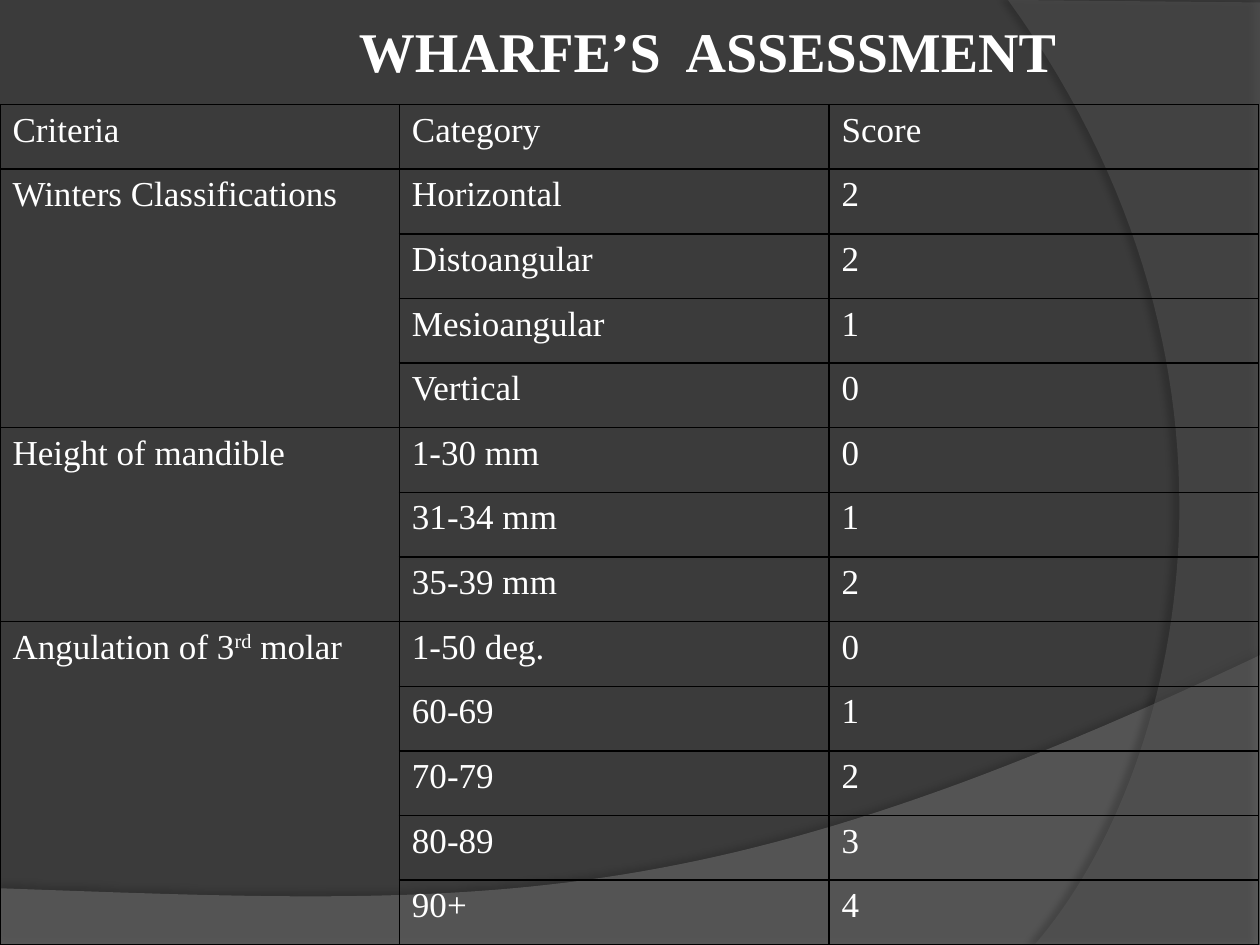
from dataclasses import dataclass

from lxml import etree
from pptx import Presentation
from pptx.dml.color import RGBColor
from pptx.oxml.ns import qn
from pptx.util import Inches, Pt

BLANK_LAYOUT = 6
BORDER_TAGS = ("a:lnL", "a:lnR", "a:lnT", "a:lnB")


@dataclass(frozen=True)
class Theme:
    background: str = "3B3B3B"
    wave: str = "7F7F7F"
    arc: str = "5E5E5E"
    text: str = "FFFFFF"
    line: str = "000000"
    font: str = "Times New Roman"
    title_size: int = 32
    body_size: int = 20
    border_width: int = 1


THEME = Theme()
HEADINGS = ("Criteria", "Category", "Score")
CRITERIA = (
    (("Winters Classifications",),
     (("Horizontal", 2), ("Distoangular", 2), ("Mesioangular", 1), ("Vertical", 0))),
    (("Height of mandible",),
     (("1-30 mm", 0), ("31-34 mm", 1), ("35-39 mm", 2))),
    (("Angulation of 3", "rd", " molar"),
     (("1-50 deg.", 0), ("60-69", 1), ("70-79", 2), ("80-89", 3), ("90+", 4))),
)


def add_child(parent, tag, **attributes):
    child = etree.SubElement(parent, qn(tag))
    for name, value in attributes.items():
        child.set(name, str(value))
    return child


def add_color(parent, color, alpha=100):
    element = add_child(add_child(parent, "a:solidFill"), "a:srgbClr", val=color)
    add_child(element, "a:alpha", val=alpha * 1000)


def curve_points(start, control_1, control_2, end, steps=60):
    points = []
    for step in range(1, steps + 1):
        t = step / steps
        weights = ((1 - t) ** 3, 3 * t * (1 - t) ** 2, 3 * t ** 2 * (1 - t), t ** 3)
        corners = (start, control_1, control_2, end)
        points.append(tuple(sum(weight * corner[axis] for weight, corner in zip(weights, corners))
                            for axis in (0, 1)))
    return points


def add_backdrop(slide, points, color, alpha, shadow_alpha, shadow_distance, shadow_angle):
    outline = [(Inches(x), Inches(y)) for x, y in points]
    builder = slide.shapes.build_freeform(*outline[0], scale=1.0)
    builder.add_line_segments(outline[1:], close=True)
    shape = builder.convert_to_shape()
    shape.fill.solid()
    shape.fill.fore_color.rgb = RGBColor.from_string(color)
    fill_color = shape._element.spPr.find(qn("a:solidFill"))[0]
    add_child(fill_color, "a:alpha", val=alpha * 1000)
    shape.line.fill.background()
    shape.shadow.inherit = False
    effects = shape._element.spPr.find(qn("a:effectLst"))
    shadow = add_child(effects, "a:outerShdw", blurRad=Pt(4), dist=Pt(shadow_distance),
                       dir=shadow_angle * 60000, algn="ctr", rotWithShape=0)
    shadow_color = add_child(shadow, "a:srgbClr", val=THEME.line)
    add_child(shadow_color, "a:alpha", val=shadow_alpha * 1000)


def format_run(run, size, bold=False):
    run.font.name = THEME.font
    run.font.size = Pt(size)
    run.font.bold = bold
    run.font.color.rgb = RGBColor.from_string(THEME.text)


def fill_cell(cell, *parts):
    paragraph = cell.text_frame.paragraphs[0]
    for index, part in enumerate(parts):
        run = paragraph.add_run()
        run.text = part
        format_run(run, THEME.body_size)
        if index == 1:
            run.font._element.set("baseline", "30000")


def style_cell(cell):
    properties = cell._tc.get_or_add_tcPr()
    for tag in BORDER_TAGS:
        add_color(add_child(properties, tag, w=Pt(THEME.border_width)), THEME.line)
    cell.fill.background()


def add_score_table(slide):
    row_count = 1 + sum(len(categories) for _, categories in CRITERIA)
    top, height = Inches(0.83), Inches(6.67)
    frame = slide.shapes.add_table(row_count, len(HEADINGS), 0, top, Inches(10), height)
    table = frame.table
    table.first_row = False
    table.horz_banding = False
    for column, width in zip(table.columns, (3.17, 3.41, 3.41)):
        column.width = Inches(width)
    for row in table.rows:
        row.height = height // row_count
    for cell in table.iter_cells():
        style_cell(cell)
    for column, heading in enumerate(HEADINGS):
        fill_cell(table.cell(0, column), heading)
    first = 1
    for criterion, categories in CRITERIA:
        last = first + len(categories) - 1
        table.cell(first, 0).merge(table.cell(last, 0))
        fill_cell(table.cell(first, 0), *criterion)
        for row, (category, score) in enumerate(categories, first):
            fill_cell(table.cell(row, 1), category)
            fill_cell(table.cell(row, 2), str(score))
        first = last + 1


def add_title(slide, text):
    box = slide.shapes.add_textbox(Inches(2.75), Inches(0.08), Inches(6.33), Inches(0.64))
    box.text_frame.word_wrap = True
    box.text_frame.text = text
    format_run(box.text_frame.paragraphs[0].runs[0], THEME.title_size, bold=True)


def main():
    presentation = Presentation()
    presentation.slide_width = Inches(10)
    presentation.slide_height = Inches(7.5)
    slide = presentation.slides.add_slide(presentation.slide_layouts[BLANK_LAYOUT])
    slide.background.fill.solid()
    slide.background.fill.fore_color.rgb = RGBColor.from_string(THEME.background)

    wave = [(0, 7.05), (0, 7.51), (10, 7.51), (10, 5.2)]
    wave += curve_points((10, 5.2), (5.59, 7.29), (3.91, 7.19), (0, 7.05))
    add_backdrop(slide, wave, THEME.wave, 45, 35, 3.5, 270)
    arc = [(10, 0.02), (10, 7.5), (8.21, 7.5)]
    arc += curve_points((8.21, 7.5), (9.35, 6.19), (10.18, 3), (8, 0))
    add_backdrop(slide, arc, THEME.arc, 40, 45, 4, 180)

    add_score_table(slide)
    add_title(slide, "WHARFE’S  ASSESSMENT")
    presentation.save("out.pptx")


if __name__ == "__main__":
    main()
